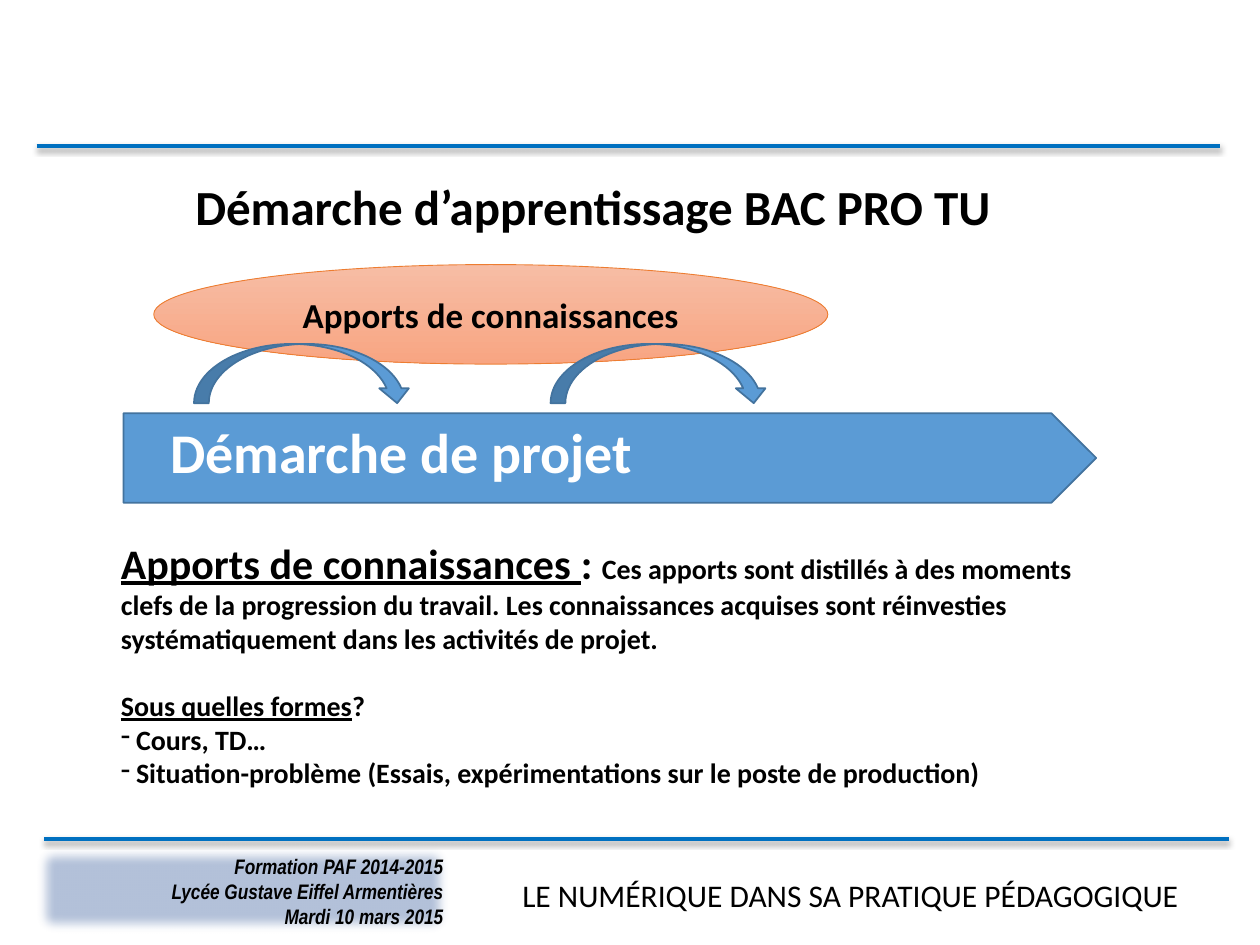
from typing import NamedTuple

from lxml.etree import SubElement
from pptx import Presentation
from pptx.dml.color import RGBColor
from pptx.enum.shapes import MSO_CONNECTOR, MSO_SHAPE
from pptx.enum.text import MSO_ANCHOR as Anchor, PP_ALIGN as Align
from pptx.oxml.ns import qn
from pptx.util import Inches, Pt

BLACK = RGBColor(0x00, 0x00, 0x00)
WHITE = RGBColor(0xFF, 0xFF, 0xFF)
RULE_BLUE = RGBColor(0x00, 0x70, 0xC0)
BADGE_BLUE = RGBColor(0x2F, 0x55, 0x97)
ARROW_BLUE = RGBColor(0x5B, 0x9B, 0xD5)
ARROW_EDGE = RGBColor(0x43, 0x73, 0x9E)
ORANGE = RGBColor(0xED, 0x7D, 0x31)
LIGHT_PEACH = RGBColor(0xF7, 0xBD, 0xA5)
PEACH = RGBColor(0xF8, 0xA5, 0x82)


class Box(NamedTuple):
    left: float
    top: float
    width: float
    height: float

    def lengths(self) -> list:
        return [Inches(value) for value in self]


class Rule(NamedTuple):
    left: float
    right: float
    y: float


RULES = [Rule(0.29, 9.68, 1.16), Rule(0.35, 9.75, 6.66)]
LOOP_ARROWS = [Box(left, 2.73, 1.73, 0.47) for left in (4.37, 1.54)]
BADGE_LINES = [
    "Formation PAF 2014-2015",
    "Lycée Gustave Eiffel Armentières",
    "Mardi 10 mars 2015",
]
FORMS = [
    "Cours, TD…",
    "Situation-problème (Essais, expérimentations sur le poste de production)",
]


def set_font(paragraph, size: float, color=BLACK, bold=True, name="Calibri") -> None:
    font = paragraph.font
    font.size, font.bold, font.name = Pt(size), bold, name
    font.color.rgb = color


def set_frame(frame, margins: tuple, anchor=Anchor.MIDDLE) -> None:
    frame.word_wrap = True
    frame.vertical_anchor = anchor
    (frame.margin_left, frame.margin_top,
     frame.margin_right, frame.margin_bottom) = map(Inches, margins)


def add_text(slide, box: Box, margins: tuple, text="", size=16, color=BLACK,
             bold=True, align=Align.LEFT):
    frame = slide.shapes.add_textbox(*box.lengths()).text_frame
    set_frame(frame, margins)
    paragraph = frame.paragraphs[0]
    paragraph.text = text
    paragraph.alignment = align
    set_font(paragraph, size, color, bold)
    return frame


def add_preset(slide, kind, box: Box, fill=None, edge=None, width=1.0):
    shape = slide.shapes.add_shape(kind, *box.lengths())
    shape.shadow.inherit = False
    if fill is not None:
        shape.fill.solid()
        shape.fill.fore_color.rgb = fill
    if edge is None:
        shape.line.fill.background()
    else:
        shape.line.color.rgb = edge
        shape.line.width = Pt(width)
    return shape


def add_rule(slide, rule: Rule) -> None:
    y = Inches(rule.y)
    line = slide.shapes.add_connector(
        MSO_CONNECTOR.STRAIGHT, Inches(rule.left), y, Inches(rule.right), y)
    line.line.color.rgb = RULE_BLUE
    line.line.width = Pt(2.25)
    effects = SubElement(line._element.spPr, qn("a:effectLst"))
    shadow = SubElement(effects, qn("a:outerShdw"), blurRad=str(Pt(3.1)),
                        dist=str(Pt(1.8)), dir="5400000", rotWithShape="0")
    color = SubElement(shadow, qn("a:srgbClr"), val=str(BLACK))
    SubElement(color, qn("a:alpha"), val="35000")


def add_badge(slide) -> None:
    badge = add_preset(slide, MSO_SHAPE.RECTANGLE, Box(0.24, 6.67, 3.37, 0.78), BADGE_BLUE)
    properties = badge._element.spPr
    color = properties.find(qn("a:solidFill")).find(qn("a:srgbClr"))
    SubElement(color, qn("a:alpha"), val="36000")
    SubElement(properties.find(qn("a:effectLst")), qn("a:softEdge"), rad=str(Inches(0.1)))
    frame = badge.text_frame
    set_frame(frame, (0.09, 0.1, 0.09, 0.04), Anchor.TOP)
    frame.text = "\n".join(BADGE_LINES)
    for paragraph in frame.paragraphs:
        paragraph.alignment = Align.RIGHT
        set_font(paragraph, 12, name="Arial Narrow")
        paragraph.font.italic = True


def add_run(paragraph, text: str, underline=False, size=None) -> None:
    run = paragraph.add_run()
    run.text = text
    if underline:
        run.font.underline = True
    if size:
        run.font.size = Pt(size)


def add_explanation(slide) -> None:
    frame = add_text(slide, Box(0.91, 4.06, 8.11, 2.68), (0.05, 0.05, 0.05, 0.32))
    intro = frame.paragraphs[0]
    add_run(intro, "Apports de connaissances ", True, 24)
    add_run(intro, ": ", size=24)
    add_run(intro, "Ces apports sont distillés à des moments clefs de la progression "
                   "du travail. Les connaissances acquises sont réinvesties "
                   "systématiquement dans les activités de projet.")

    question = frame.add_paragraph()
    question.space_before = Pt(19.5)
    add_run(question, "Sous quelles formes", True)
    add_run(question, "?")
    set_font(question, 16)

    for form in FORMS:
        item = frame.add_paragraph()
        item.text = form
        properties = item._p.get_or_add_pPr()
        properties.set("marL", str(Inches(0.12)))
        properties.set("indent", str(Inches(-0.12)))
        SubElement(properties, qn("a:buChar"), char="-")
        set_font(item, 16)


def add_project_diagram(slide) -> None:
    # Knowledge input
    ellipse = add_preset(slide, MSO_SHAPE.OVAL, Box(1.22, 2.1, 5.35, 0.79),
                         edge=ORANGE, width=0.5)
    ellipse.fill.gradient()
    ellipse.fill.gradient_angle = 270
    for stop, color in zip(ellipse.fill.gradient_stops, (LIGHT_PEACH, PEACH)):
        stop.color.rgb = color
    set_frame(ellipse.text_frame, (0.1, 0.05, 0.1, 0.05))
    label = ellipse.text_frame.paragraphs[0]
    label.text = "Apports de connaissances"
    label.alignment = Align.CENTER
    set_font(label, 20)

    # Project arrow with its title
    add_preset(slide, MSO_SHAPE.PENTAGON, Box(0.98, 3.28, 7.72, 0.71), ARROW_BLUE, ARROW_EDGE)
    add_text(slide, Box(1.3, 3.36, 6.06, 0.44), (0.05,) * 4, "Démarche de projet", 32, WHITE)

    # Loops between knowledge and project
    for box in LOOP_ARROWS:
        add_preset(slide, MSO_SHAPE.CURVED_DOWN_ARROW, box, ARROW_BLUE, ARROW_EDGE)


def main() -> None:
    presentation = Presentation()
    presentation.slide_width, presentation.slide_height = Inches(10), Inches(7.5)
    slide = presentation.slides.add_slide(presentation.slide_layouts[6])

    # Header and footer
    for rule in RULES:
        add_rule(slide, rule)
    add_badge(slide)
    add_text(slide, Box(3.9, 6.9, 5.7, 0.4), (0.1, 0.05, 0.1, 0.05),
             "LE NUMÉRIQUE DANS SA PRATIQUE PÉDAGOGIQUE", 18, bold=False, align=Align.CENTER)

    # Content
    add_explanation(slide)
    add_project_diagram(slide)
    title = add_text(slide, Box(1.46, 1.23, 8.03, 0.87), (0.09, 0.04, 0.09, 0.04),
                     "Démarche d’apprentissage BAC PRO TU", 28)
    title.paragraphs[0].line_spacing = 0.9

    presentation.save("out.pptx")


if __name__ == "__main__":
    main()
